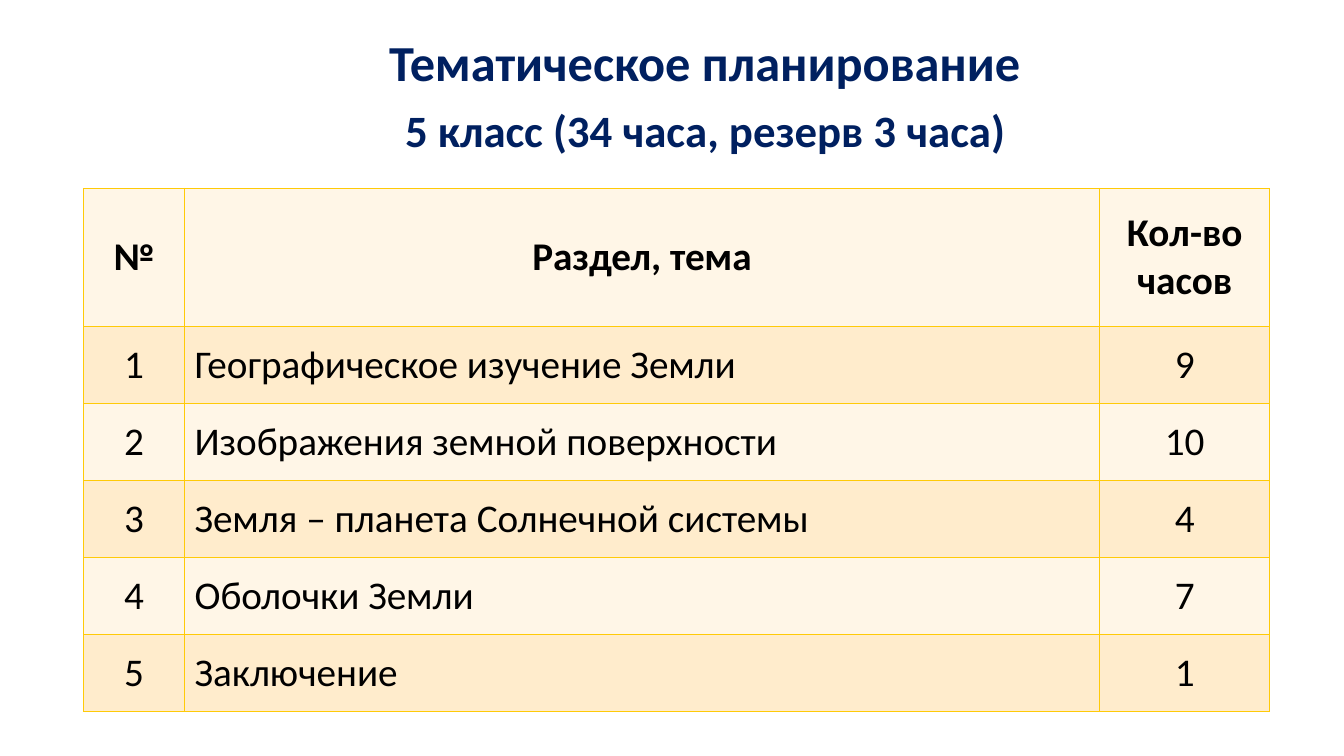
from lxml import etree
from pptx import Presentation
from pptx.dml.color import RGBColor
from pptx.enum.text import MSO_ANCHOR, PP_ALIGN
from pptx.oxml.ns import qn
from pptx.util import Cm, Pt

CENTER, LEFT = PP_ALIGN.CENTER, PP_ALIGN.LEFT
MIDDLE = MSO_ANCHOR.MIDDLE
TITLE_ONLY = 5
COLORS = {
    "heading": "002060",
    "text": "000000",
    "light": "FFF6E7",
    "dark": "FFECCC",
    "border": "FFCA08",
}


def write(frame, text, size, color, bold, align):
    frame.text = text
    para = frame.paragraphs[0]
    para.alignment = align
    para.font.name = "Calibri"
    para.font.size = Pt(size)
    para.font.bold = bold
    para.font.color.rgb = RGBColor.from_string(COLORS[color])


def add_borders(cell):
    properties = cell._tc.get_or_add_tcPr()
    for side in ("a:lnL", "a:lnR", "a:lnT", "a:lnB"):
        line = etree.SubElement(properties, qn(side), w=str(Pt(1)))
        fill = etree.SubElement(line, qn("a:solidFill"))
        etree.SubElement(fill, qn("a:srgbClr"), val=COLORS["border"])


deck = Presentation()
deck.slide_width, deck.slide_height = Cm(33.87), Cm(19.05)
page = deck.slides.add_slide(deck.slide_layouts[TITLE_ONLY])

# Headings
title = page.shapes.title
title.left, title.top, title.width, title.height = Cm(9.55), Cm(0.64), Cm(16.59), Cm(1.8)
subtitle = page.shapes.add_textbox(Cm(9.96), Cm(2.44), Cm(15.8), Cm(1.63))
headings = [
    (title, "Тематическое планирование", 36),
    (subtitle, "5 класс (34 часа, резерв 3 часа)", 32),
]
for box, text, size in headings:
    write(box.text_frame, text, size, "heading", True, LEFT)
    box.text_frame.word_wrap = False
    box.text_frame.vertical_anchor = MIDDLE

# Table of topics and hours
topics = [
    ("Географическое изучение Земли", 9),
    ("Изображения земной поверхности", 10),
    ("Земля – планета Солнечной системы", 4),
    ("Оболочки Земли", 7),
    ("Заключение", 1),
]
rows = [("№", "Раздел, тема", "Кол-во часов")]
rows += [(number, topic, hours) for number, (topic, hours) in enumerate(topics, 1)]
widths = [Cm(2.54), Cm(23.06), Cm(4.29)]
heights = [Cm(3.48)] + [Cm(1.94)] * len(topics)

table = page.shapes.add_table(
    len(rows), len(widths), Cm(2.11), Cm(4.75), sum(widths), sum(heights)
).table
for column, width in zip(table.columns, widths):
    column.width = width
for r, values in enumerate(rows):
    table.rows[r].height = heights[r]
    is_header = r == 0
    for c, value in enumerate(values):
        cell = table.cell(r, c)
        align = LEFT if c == 1 and not is_header else CENTER
        write(cell.text_frame, str(value), 28, "text", is_header, align)
        cell.vertical_anchor = MIDDLE
        add_borders(cell)
        cell.fill.solid()
        cell.fill.fore_color.rgb = RGBColor.from_string(COLORS["dark" if r % 2 else "light"])

deck.save("out.pptx")
